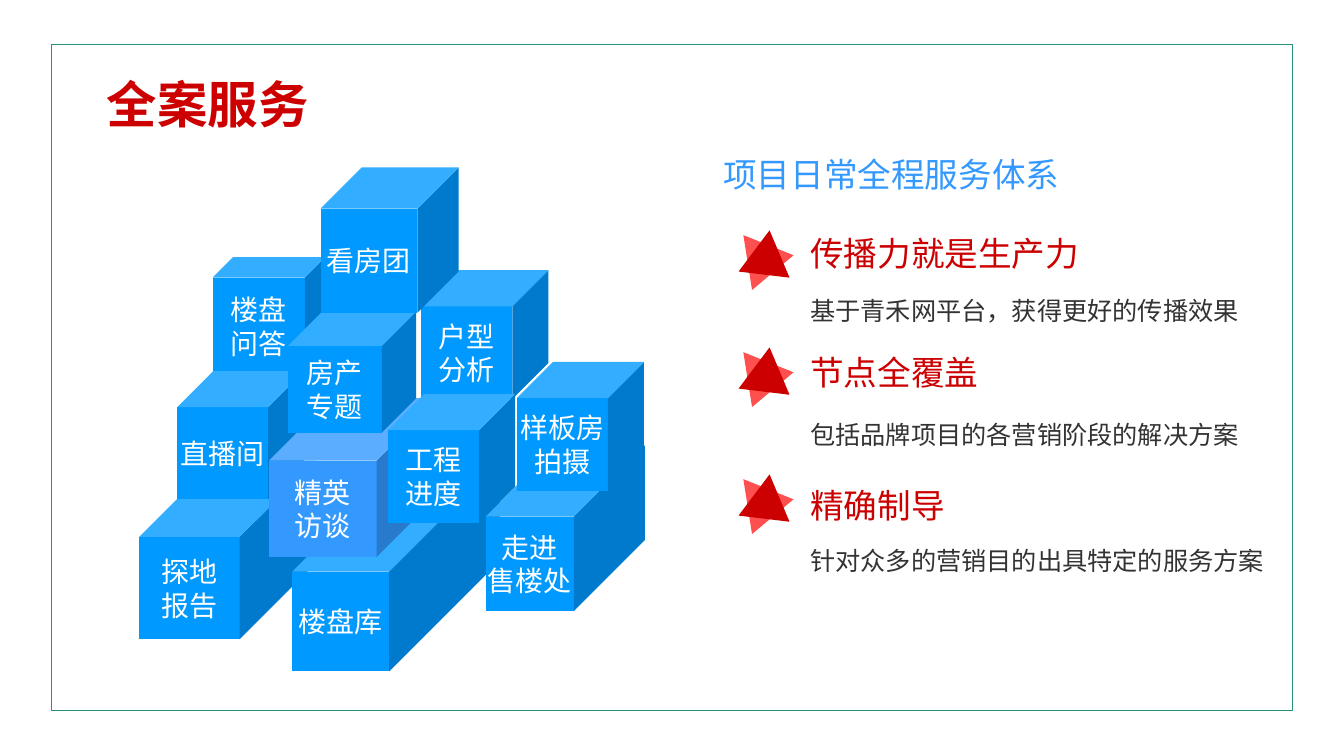
from lxml import etree
from pptx import Presentation
from pptx import util as u
from pptx.dml import color
from pptx.enum import shapes, text
from pptx.oxml import ns

FONT = "Noto Sans CJK SC"
RED, BLUE, WHITE, DARK = "CC0000", "0099FF", "FFFFFF", "333333"
CUBES = [
    (0, 7.39, 4.45, 4.5, 0.432, BLUE, ["探地", "报告"]),
    (3.86, 7.39, 5.23, 5.31, 0.534, BLUE, ["楼盘库"]),
    (8.73, 7.01, 4.01, 4.17, 0.446, BLUE, ["走进", "售楼处"]),
    (1.85, 2.26, 2.84, 2.97, 0.181, BLUE, ["楼盘", "问答"]),
    (0.96, 5.13, 3.2, 3.23, 0.284, BLUE, ["直播间"]),
    (3.27, 5.81, 4.29, 4.01, 0.394, "3399FF", ["精英", "访谈"]),
    (7.11, 2.59, 3.2, 3.25, 0.284, BLUE, ["户型", "分析"]),
    (6.27, 5.71, 3.2, 3.25, 0.284, BLUE, ["工程", "进度"]),
    (9.52, 4.9, 3.2, 3.25, 0.284, BLUE, ["样板房", "拍摄"]),
    (3.75, 3.63, 3.23, 3.05, 0.284, BLUE, ["房产", "专题"]),
    (4.57, 0, 3.48, 3.66, 0.298, BLUE, ["看房团"]),
]
ITEMS = [
    (1.98, 2.18, 3.56, "传播力就是生产力", "基于青禾网平台，获得更好的传播效果"),
    (4.98, 5.13, 6.68, "节点全覆盖", "包括品牌项目的各营销阶段的解决方案"),
    (8.33, 8.33, 9.85, "精确制导", "针对众多的营销目的出具特定的服务方案"),
]


def rgb(code):
    """Turn a hex string into a colour."""
    return color.RGBColor.from_string(code)


def write(shape, lines, size, tint, align, bold=False):
    """Fill a shape with one run per line."""
    frame = shape.text_frame
    frame.word_wrap = False
    frame.auto_size = text.MSO_AUTO_SIZE.NONE
    frame.vertical_anchor = text.MSO_ANCHOR.MIDDLE
    for num, line in enumerate(lines):
        para = frame.add_paragraph() if num else frame.paragraphs[0]
        para.alignment = align
        run = para.add_run()
        run.text = line
        font = run.font
        font.name, font.size, font.bold = FONT, u.Pt(size), bold
        font.color.rgb = rgb(tint)
        east = etree.SubElement(font._element, ns.qn("a:ea"))
        east.set("typeface", FONT)


def solid(slide, kind, box, fill):
    """Add a plain filled shape without line or shadow."""
    shape = slide.shapes.add_shape(kind, *map(u.Cm, box))
    shape.shadow.inherit = False
    shape.fill.solid()
    shape.fill.fore_color.rgb = rgb(fill)
    shape.line.fill.background()
    return shape


def label(slide, left, top, line, size, tint):
    """Add a one-line text box sized to its text."""
    wide = len(line) * size * 2.54 / 72 + 0.51
    high = 1.2 * size * 2.54 / 72 + 0.25
    box = slide.shapes.add_textbox(*map(u.Cm, (left, top, wide, high)))
    write(box, [line], size, tint, text.PP_ALIGN.LEFT)


def border(slide, box):
    """Draw the page border behind the title."""
    frame = solid(slide, shapes.MSO_SHAPE.RECTANGLE, box, WHITE)
    frame.line.color.rgb = rgb("259179")
    frame.line.width = u.Pt(1)
    slide.shapes.title._element.addprevious(frame._element)


def head(slide, box):
    """Place the slide title."""
    title = slide.shapes.title
    title.left, title.top, title.width, title.height = map(u.Cm, box)
    write(title, ["全案服务"], 36, RED, text.PP_ALIGN.LEFT, True)


def stack(slide, left, top):
    """Pile up the service cubes from back to front."""
    for dx, dy, wide, high, depth, fill, lines in CUBES:
        box = (left + dx, top + dy, wide, high)
        cube = solid(slide, shapes.MSO_SHAPE.CUBE, box, fill)
        cube.adjustments[0] = depth
        write(cube, lines, 20, WHITE, text.PP_ALIGN.CENTER)


def star(slide, left, top):
    """Draw a marker of two turned triangles."""
    for shift, wide, high, turn, fill in [
        (0, 1.4, 1.17, 81, "FF5050"),
        (0.08, 1.3, 1.12, 127, RED),
    ]:
        box = (left + shift, top + 2 * shift, wide, high)
        solid(slide, shapes.MSO_SHAPE.ISOSCELES_TRIANGLE, box, fill).rotation = turn


def panel(slide, left, top):
    """Set the lead line and the marked points."""
    label(slide, left, top, "项目日常全程服务体系", 24, "3399FF")
    for name_y, star_y, note_y, name, note in ITEMS:
        star(slide, left + 0.74, top + star_y)
        label(slide, left + 2.19, top + name_y, name, 24, RED)
        label(slide, left + 2.19, top + note_y, note, 18, DARK)


def main():
    """Build and save the slide."""
    deck = Presentation()
    deck.slide_width, deck.slide_height = u.Cm(33.87), u.Cm(19.05)
    slide = deck.slides.add_slide(deck.slide_layouts[5])
    border(slide, (1.3, 1.12, 31.27, 16.79))
    head(slide, (2.44, 1.7, 5.72, 1.8))
    stack(slide, 3.51, 4.22)
    panel(slide, 17.98, 3.76)
    deck.save("out.pptx")


if __name__ == "__main__":
    main()
